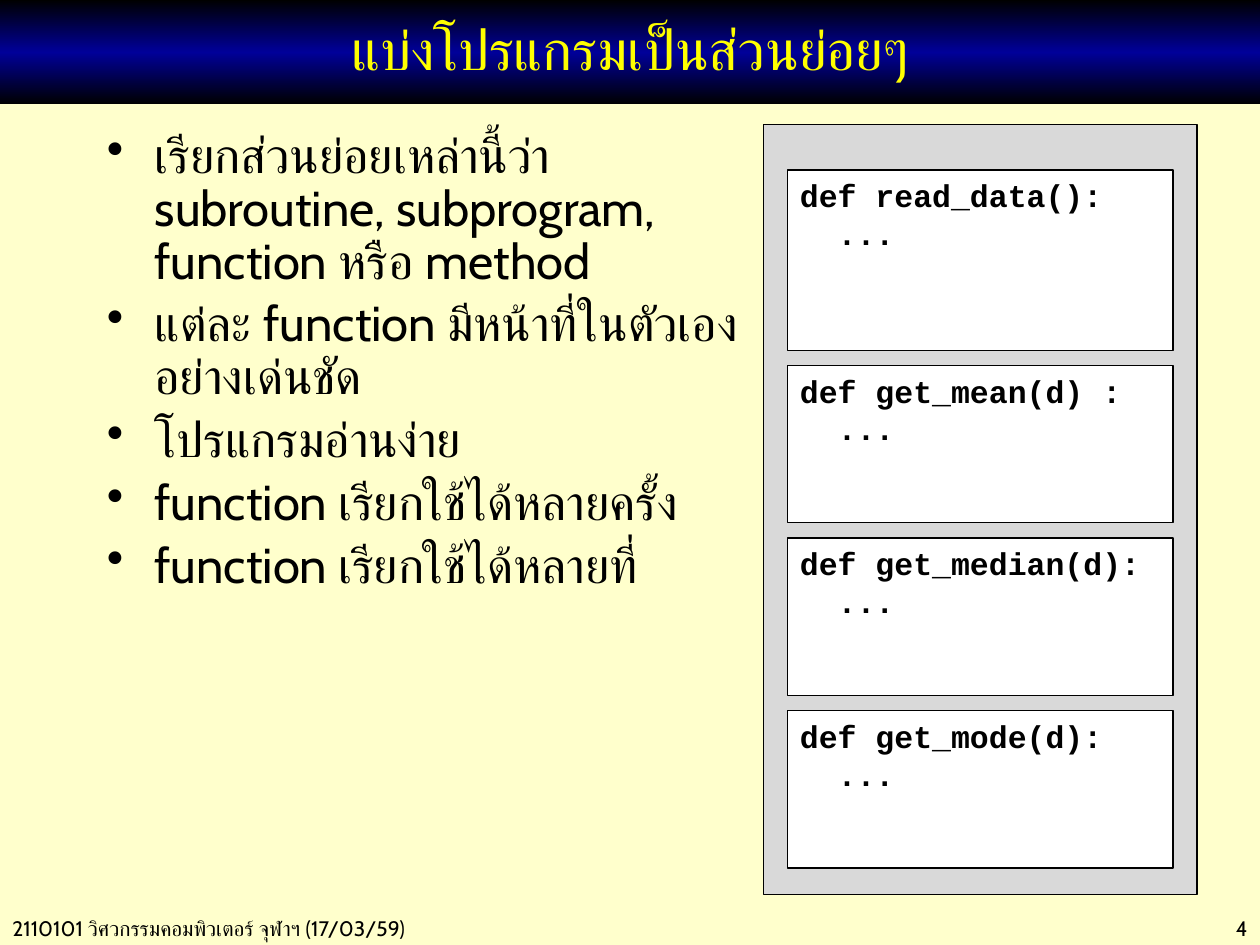
from copy import deepcopy
from pptx import Presentation
from pptx.dml.color import RGBColor as RGB
from pptx.enum.shapes import MSO_SHAPE as SHAPE
from pptx.enum.text import MSO_ANCHOR as ANCHOR, PP_ALIGN as ALIGN
from pptx.oxml.ns import qn
from pptx.util import Inches, Pt

HUE = {"page": "FFFFCC", "ink": "000000", "navy": "000099",
       "title": "FFFF00", "panel": "D9D9D9", "code": "FFFFFF"}

deck = Presentation()
deck.slide_width, deck.slide_height = Inches(10), Inches(7.5)
slide = deck.slides.add_slide(deck.slide_layouts[6])
slide.background.fill.solid()
slide.background.fill.fore_color.rgb = RGB.from_string(HUE["page"])


def add_box(x, y, w, h, fill=None):
    """Add a text box, or an outlined rectangle when a fill is named."""
    area = [Inches(v) for v in (x, y, w, h)]
    if fill:
        box = slide.shapes.add_shape(SHAPE.RECTANGLE, *area)
        box.shadow.inherit = False
        box.fill.solid()
        box.fill.fore_color.rgb = RGB.from_string(HUE[fill])
        box.line.color.rgb = RGB.from_string(HUE["ink"])
        box.line.width = Pt(0.75)
    else:
        box = slide.shapes.add_textbox(*area)
    box.text_frame.word_wrap = True
    box.text_frame.vertical_anchor = ANCHOR.TOP
    return box


def set_text(para, text, size, face="Cabin", hue="ink", align=ALIGN.LEFT):
    para.text = text
    para.alignment = align
    para.font.size = Pt(size)
    para.font.name = face
    para.font.color.rgb = RGB.from_string(HUE[hue])


# Footer and page number
top, high = 7.22, 0.3
foot = add_box(0, top, 3.9, high)
set_text(foot.text_frame.paragraphs[0],
         "2110101 วิศวกรรมคอมพิวเตอร์ จุฬาฯ (17/03/59)", 12)
page = add_box(8.62, top, 1.38, high)
set_text(page.text_frame.paragraphs[0], "4", 12, align=ALIGN.RIGHT)

# Title band, dark at both edges
band = add_box(0, 0, 10, 0.83, "navy")
band.line.fill.background()
band.fill.gradient()
band.fill.gradient_angle = 90
stops = band.fill._fill._gradFill.find(qn("a:gsLst"))
stops.append(deepcopy(stops[0]))
for stop, spot, hue in zip(band.fill.gradient_stops, (0, 0.5, 1),
                           ("ink", "navy", "ink")):
    stop.position = spot
    stop.color.rgb = RGB.from_string(HUE[hue])
band.text_frame.vertical_anchor = ANCHOR.MIDDLE
head = band.text_frame.paragraphs[0]
set_text(head, "แบ่งโปรแกรมเป็นส่วนย่อยๆ", 32, hue="title", align=ALIGN.CENTER)
head.line_spacing = 0.9

# Bullet list
points = ["เรียกส่วนย่อยเหล่านี้ว่า\nsubroutine, subprogram, function หรือ method",
          "แต่ละ function มีหน้าที่ในตัวเองอย่างเด่นชัด",
          "โปรแกรมอ่านง่าย",
          "function เรียกใช้ได้หลายครั้ง",
          "function เรียกใช้ได้หลายที่"]
body = add_box(0.75, 0.99, 5.31, 4.02).text_frame
for i, point in enumerate(points):
    para = body.add_paragraph() if i else body.paragraphs[0]
    set_text(para, point, 28)
    para.line_spacing = 0.9
    para.space_before = Pt(5.6)
    props = para._p.get_or_add_pPr()
    props.set("marL", str(Inches(0.38)))
    props.set("indent", str(-Inches(0.38)))
    mark = props.makeelement(qn("a:buChar"), {"char": "•"})
    props.find(qn("a:defRPr")).addprevious(mark)

# Program panel with one box for each function
add_box(6.06, 0.99, 3.44, 6.11, "panel")
heads = ["def read_data():", "def get_mean(d) :",
         "def get_median(d):", "def get_mode(d):"]
gap, y = 0.12, 1.35
for i, line in enumerate(heads):
    high = 1.25 if i else 1.43
    code = add_box(6.25, y, 3.06, high, "code")
    para = code.text_frame.paragraphs[0]
    set_text(para, line + "\n  ...", 18, "Courier New")
    para.font.bold = True
    y += high + gap

deck.save("out.pptx")
